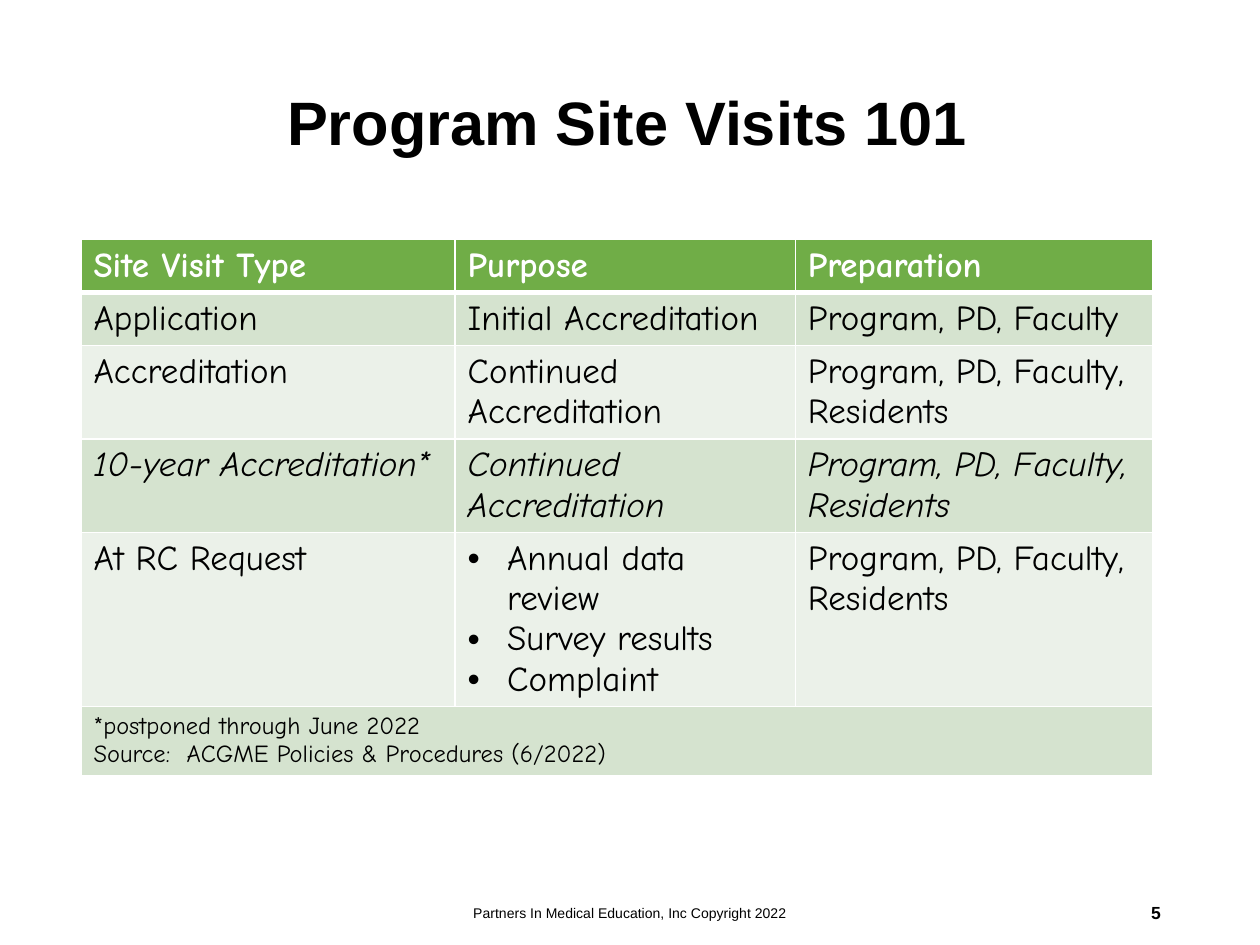
from lxml.etree import SubElement
from pptx import Presentation
from pptx.dml.color import RGBColor
from pptx.enum.text import MSO_ANCHOR as Anchor, PP_ALIGN as Align
from pptx.oxml.ns import qn
from pptx.util import Pt

COLORS = {"header": "70AD47", "dark_band": "D5E3CF", "light_band": "EBF1E9",
          "rule": "FFFFFF", "header_text": "FFFFFF", "text": "000000"}
TABLE_FONT = "Comic Neue"
PAGE_FONT = "Arial"
COLUMN_WIDTHS = [213.8, 194.4, 204.4]
ROW_HEIGHTS = [30, 30, 53, 53, 99, 39]
ALL_STAFF = "Program, PD, Faculty, Residents"
VISITS = [
    ["Site Visit Type", "Purpose", "Preparation"],
    ["Application", "Initial Accreditation", "Program, PD, Faculty"],
    ["Accreditation", "Continued Accreditation", ALL_STAFF],
    ["10-year Accreditation*", "Continued Accreditation", ALL_STAFF],
    ["At RC Request", ["Annual data review", "Survey results", "Complaint"], ALL_STAFF],
    [["*postponed through June 2022", "Source:  ACGME Policies & Procedures (6/2022)"]],
]
HEADER_ROW, POSTPONED_ROW, REQUEST_ROW, NOTE_ROW = 0, 3, 4, 5


def style(paragraph, font_name, size, color="text", bold=False, italic=False):
    font = paragraph.font
    font.name, font.size, font.bold, font.italic = font_name, Pt(size), bold, italic
    font.color.rgb = RGBColor.from_string(COLORS[color])


def add_bullet(paragraph, indent=22.5):
    properties = paragraph._p.get_or_add_pPr()
    properties.set("marL", str(Pt(indent)))
    properties.set("indent", str(-Pt(indent)))
    SubElement(properties, qn("a:buFont"), typeface="Arial")
    SubElement(properties, qn("a:buChar"), char="•")


def add_borders(cell, bottom_width):
    properties = cell._tc.get_or_add_tcPr()
    for side, width in (("L", 1), ("R", 1), ("T", 1), ("B", bottom_width)):
        line = SubElement(properties, qn(f"a:ln{side}"), w=str(Pt(width)))
        fill = SubElement(line, qn("a:solidFill"))
        SubElement(fill, qn("a:srgbClr"), val=COLORS["rule"])


def add_visit_table(slide, left, top, width, height):
    table = slide.shapes.add_table(len(VISITS), len(COLUMN_WIDTHS), Pt(left), Pt(top),
                                   Pt(width), Pt(height)).table
    for column, column_width in zip(table.columns, COLUMN_WIDTHS):
        column.width = Pt(column_width)
    for row, row_height in zip(table.rows, ROW_HEIGHTS):
        row.height = Pt(row_height)
    table.cell(NOTE_ROW, 0).merge(table.cell(NOTE_ROW, len(COLUMN_WIDTHS) - 1))

    for r, row in enumerate(table.rows):
        is_header = r == HEADER_ROW
        band = "header" if is_header else "dark_band" if r % 2 else "light_band"
        for cell in row.cells:
            add_borders(cell, 3 if is_header else 1)
            cell.fill.solid()
            cell.fill.fore_color.rgb = RGBColor.from_string(COLORS[band])
        for cell, content in zip(row.cells, VISITS[r]):
            lines = content if isinstance(content, list) else [content]
            cell.text_frame.text = "\n".join(lines)
            for paragraph in cell.text_frame.paragraphs:
                if r == REQUEST_ROW and len(lines) > 1:
                    add_bullet(paragraph)
                style(paragraph, TABLE_FONT, 14 if r == NOTE_ROW else 20,
                      "header_text" if is_header else "text",
                      bold=is_header, italic=r == POSTPONED_ROW)


def add_label(slide, box, text, size, align=Align.LEFT, bold=False, line_spacing=1.0):
    frame = slide.shapes.add_textbox(*map(Pt, box)).text_frame
    frame.word_wrap = True
    frame.vertical_anchor = Anchor.MIDDLE
    frame.text = text
    paragraph = frame.paragraphs[0]
    paragraph.alignment = align
    paragraph.line_spacing = line_spacing
    style(paragraph, PAGE_FONT, size, bold=bold)


def add_footer(slide, top, height):
    add_label(slide, (238.3, top, 243.4, height),
              "Partners In Medical Education, Inc Copyright 2022", 8, Align.CENTER)
    add_label(slide, (508.3, top, 162, height), "5", 10, Align.RIGHT, bold=True)


def main():
    deck = Presentation()
    deck.slide_width, deck.slide_height = Pt(720), Pt(540)
    slide = deck.slides.add_slide(deck.slide_layouts[6])
    add_visit_table(slide, 46.3, 137, sum(COLUMN_WIDTHS), sum(ROW_HEIGHTS))
    add_label(slide, (157, 19.4, 514, 104.4), "Program Site Visits 101", 35,
              bold=True, line_spacing=0.9)
    add_footer(slide, 507, 28.8)
    deck.save("out.pptx")


if __name__ == "__main__":
    main()
